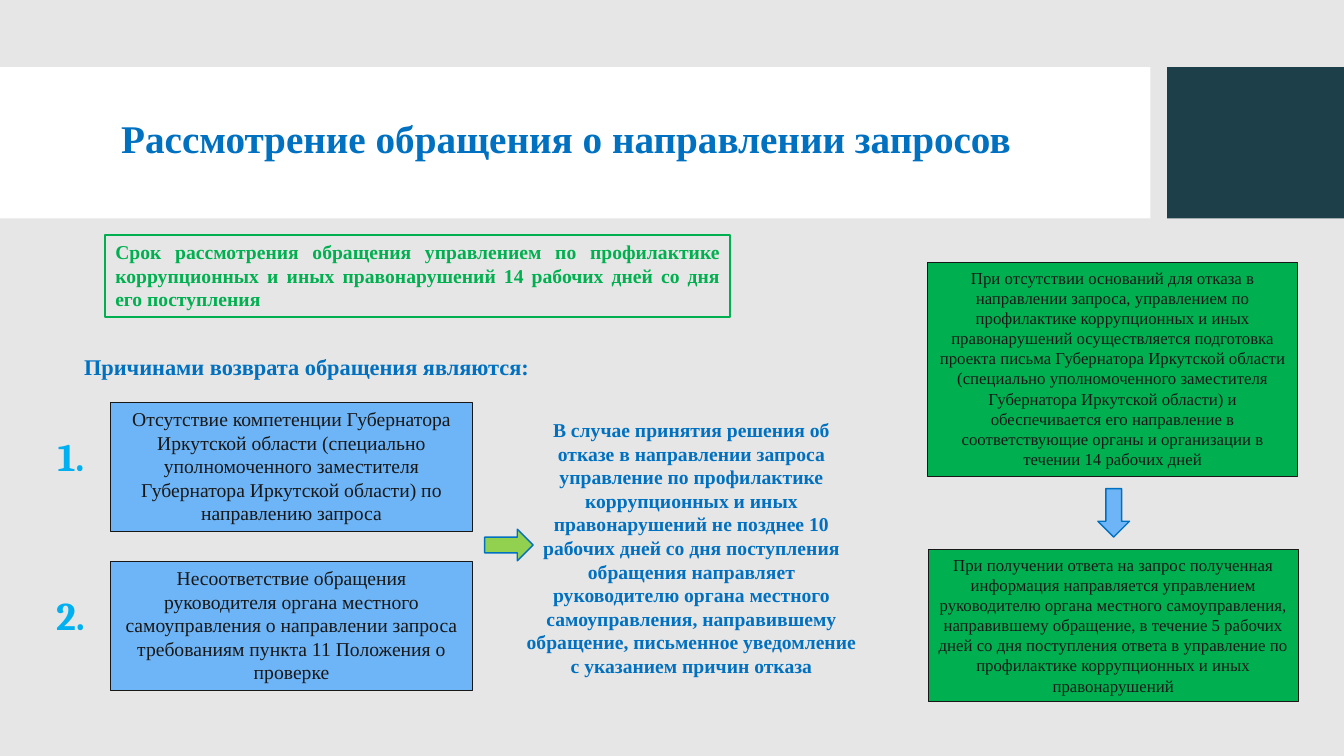
from pptx import Presentation
from pptx.dml.color import RGBColor
from pptx.enum import shapes, text
from pptx.util import Pt

BACKGROUND = RGBColor(0xE7, 0xE6, 0xE6)
WHITE = RGBColor(0xFF, 0xFF, 0xFF)
DARK_TEAL = RGBColor(0x1D, 0x3F, 0x4A)
BLUE = RGBColor(0x00, 0x70, 0xC0)
LIGHT_BLUE = RGBColor(0x6D, 0xB5, 0xF7)
SKY = RGBColor(0x00, 0xB0, 0xF0)
GREEN = RGBColor(0x00, 0xB0, 0x50)
LIME = RGBColor(0x92, 0xD0, 0x50)
BLACK = RGBColor(0x18, 0x17, 0x17)

SERIF = "Times New Roman"
CENTER = text.PP_ALIGN.CENTER
RECTANGLE = shapes.MSO_SHAPE.RECTANGLE
ARROW = shapes.MSO_SHAPE.RIGHT_ARROW

REASONS = [
    "Отсутствие компетенции Губернатора Иркутской области (специально уполномоченного "
    "заместителя Губернатора Иркутской области) по направлению запроса",
    "Несоответствие обращения руководителя органа местного самоуправления о направлении "
    "запроса требованиям пункта 11 Положения о проверке",
]
REFUSAL = (
    "В случае принятия решения об отказе в направлении запроса управление по профилактике "
    "коррупционных и иных правонарушений не позднее 10 рабочих дней со дня поступления "
    "обращения направляет руководителю органа местного самоуправления, направившему "
    "обращение, письменное уведомление с указанием причин отказа"
)
DEADLINE = (
    "Срок рассмотрения обращения управлением по профилактике коррупционных и иных "
    "правонарушений 14 рабочих дней со дня его поступления"
)
PREPARATION = (
    "При отсутствии оснований для отказа в направлении запроса, управлением по профилактике "
    "коррупционных и иных правонарушений осуществляется подготовка проекта письма "
    "Губернатора Иркутской области (специально уполномоченного заместителя Губернатора "
    "Иркутской области) и обеспечивается его направление в соответствующие органы и "
    "организации в течении 14 рабочих дней"
)
ANSWER = (
    "При получении ответа на запрос полученная информация направляется управлением "
    "руководителю органа местного самоуправления, направившему обращение, в течение 5 "
    "рабочих дней со дня поступления ответа в управление по профилактике коррупционных и "
    "иных правонарушений"
)


def add_figure(slide, kind, box, fill=None, line=None, line_width=0.75):
    """Add a preset shape; a missing fill or line colour means none is drawn."""
    shape = slide.shapes.add_shape(kind, *map(Pt, box))
    shape.shadow.inherit = False
    if fill is None:
        shape.fill.background()
    else:
        shape.fill.solid()
        shape.fill.fore_color.rgb = fill
    if line is None:
        shape.line.fill.background()
    else:
        shape.line.color.rgb = line
        shape.line.width = Pt(line_width)
    return shape


def write(shape, wording, size, color, bold=False, align=CENTER, font=SERIF, wrap=True):
    frame = shape.text_frame
    frame.text = wording
    frame.word_wrap = wrap
    frame.vertical_anchor = text.MSO_ANCHOR.TOP
    frame.auto_size = text.MSO_AUTO_SIZE.SHAPE_TO_FIT_TEXT
    paragraph = frame.paragraphs[0]
    paragraph.alignment = align
    run_font = paragraph.runs[0].font
    run_font.name = font
    run_font.size = Pt(size)
    run_font.bold = bold
    run_font.color.rgb = color


def add_label(slide, box, wording, size, color, **style):
    label = slide.shapes.add_textbox(*map(Pt, box))
    write(label, wording, size, color, bold=True, **style)
    return label


def add_title(slide, wording):
    title = add_label(slide, (25.9, 58.3, 756.7, 85), wording, 28, BLUE)
    title.text_frame.auto_size = text.MSO_AUTO_SIZE.NONE
    title.text_frame.vertical_anchor = text.MSO_ANCHOR.MIDDLE
    title.text_frame.paragraphs[0].line_spacing = 0.9


def add_step(slide, box, wording, size, fill):
    step = add_figure(slide, RECTANGLE, box, fill, BLACK)
    write(step, wording, size, BLACK)


def main():
    presentation = Presentation()
    presentation.slide_width = Pt(960)
    presentation.slide_height = Pt(540)
    slide = presentation.slides.add_slide(presentation.slide_layouts[6])
    slide.background.fill.solid()
    slide.background.fill.fore_color.rgb = BACKGROUND

    add_figure(slide, RECTANGLE, (0, 48, 821.8, 108), WHITE)
    add_figure(slide, RECTANGLE, (833.6, 48, 126.4, 108), DARK_TEAL)
    add_title(slide, "Рассмотрение обращения о направлении запросов")

    deadline = add_figure(slide, RECTANGLE, (75.3, 168, 446.4, 58.2), None, GREEN, 1.5)
    write(deadline, DEADLINE, 14, GREEN, bold=True, align=text.PP_ALIGN.JUSTIFY)

    left = text.PP_ALIGN.LEFT
    add_label(slide, (53, 248.4, 336.2, 26.6), "Причинами возврата обращения являются:",
              16, BLUE, align=left, wrap=False)
    for index, reason in enumerate(REASONS):
        top = 287.3 + index * 113.6
        add_step(slide, (79, top, 258.5, 92.2), reason, 14, LIGHT_BLUE)
        add_label(slide, (34 - index, top + 18, 44.6, 41), f"{index + 1}.", 28, SKY,
                  align=left, font="Cambria")
    add_label(slide, (367.6, 295.2, 252.7, 193.7), REFUSAL, 14, BLUE)

    add_step(slide, (662.6, 187.4, 264.4, 152.7), PREPARATION, 12, GREEN)
    add_step(slide, (663, 392.4, 264.4, 108.9), ANSWER, 12, GREEN)

    add_figure(slide, ARROW, (346.2, 378, 34.6, 22.6), LIME, BLUE, 1)
    down_arrow = add_figure(slide, ARROW, (778.2, 355, 34.6, 22.6), LIGHT_BLUE, BLUE, 1)
    down_arrow.rotation = 90

    presentation.save("out.pptx")


if __name__ == "__main__":
    main()
